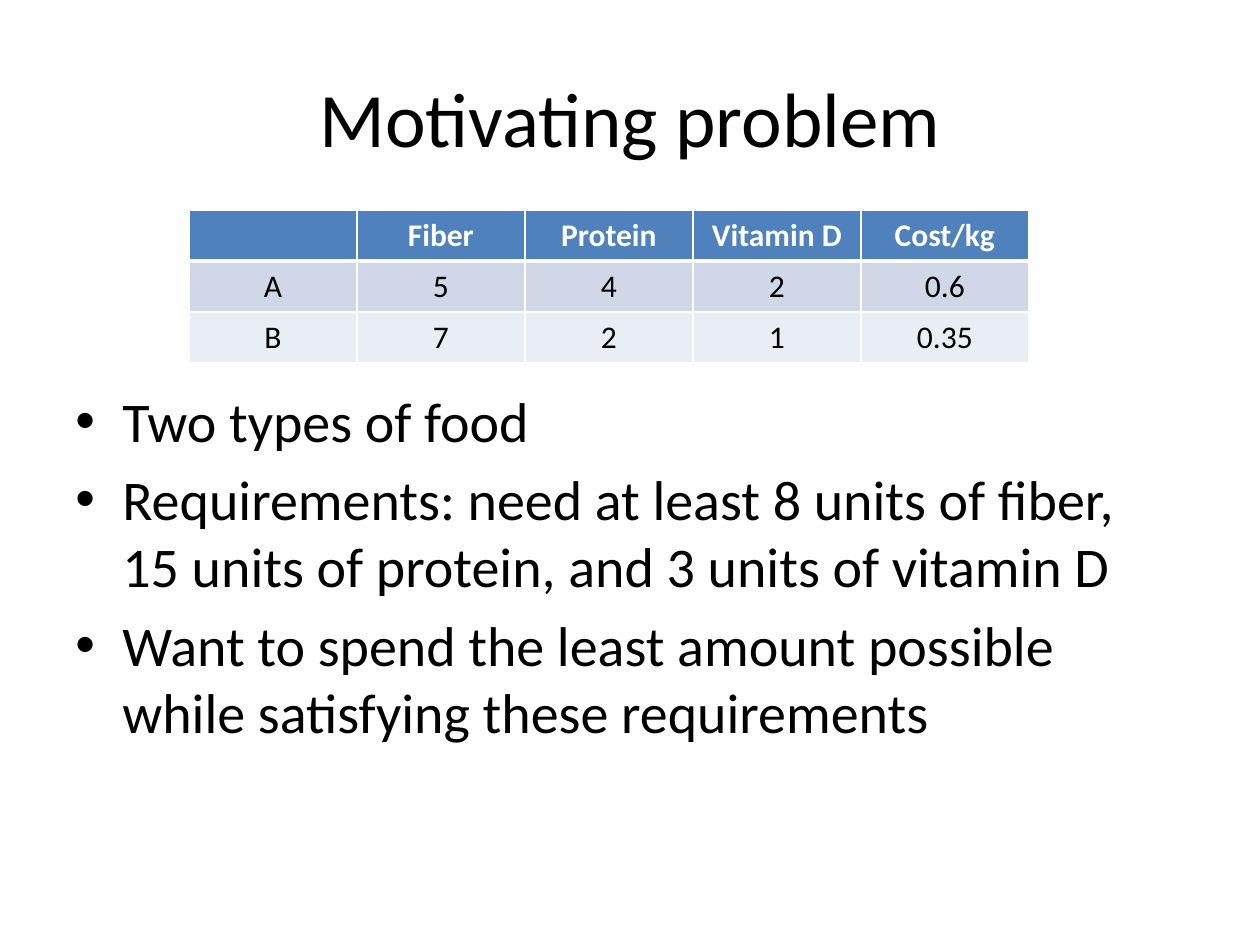
import dataclasses

import pptx
import pptx.dml.color
import pptx.enum.text
import pptx.oxml
import pptx.oxml.ns
import pptx.util

ALIGN = pptx.enum.text.PP_ALIGN
ANCHOR = pptx.enum.text.MSO_ANCHOR

TITLE = "Motivating problem"
FOODS = [
    ["", "Fiber", "Protein", "Vitamin D", "Cost/kg"],
    ["A", "5", "4", "2", "0.6"],
    ["B", "7", "2", "1", "0.35"],
]
BULLETS = [
    "Two types of food",
    "Requirements: need at least 8 units of fiber, "
    "15 units of protein, and 3 units of vitamin D",
    "Want to spend the least amount possible while satisfying these requirements",
]


@dataclasses.dataclass(frozen=True)
class Theme:
    font: str = "Calibri"
    text: str = "000000"
    header_text: str = "FFFFFF"
    border: str = "FFFFFF"
    header_fill: str = "4F81BD"
    row_fills: tuple = ("D0D8E8", "E9EDF4")
    title_size: int = 44
    body_size: int = 32
    table_size: int = 18
    border_width: int = 1
    header_rule: int = 3


THEME = Theme()


def px(n):
    return pptx.util.Emu(round(n * 914400 / 126))


def rgb(color):
    return pptx.dml.color.RGBColor.from_string(color)


def style(p, size, color=THEME.text, bold=False, align=ALIGN.LEFT):
    p.alignment = align
    p.font.name = THEME.font
    p.font.size = pptx.util.Pt(size)
    p.font.bold = bold
    p.font.color.rgb = rgb(color)


def add_text_box(s, x, y, w, h, anchor):
    tf = s.shapes.add_textbox(px(x), px(y), px(w), px(h)).text_frame
    tf.word_wrap = True
    tf.vertical_anchor = anchor
    return tf


def add_title(s, text):
    p = add_text_box(s, 63, 38, 1134, 157, ANCHOR.MIDDLE).paragraphs[0]
    p.text = text
    style(p, THEME.title_size, align=ALIGN.CENTER)


def add_bullets(s, items):
    tf = add_text_box(s, 63, 380, 1134, 464, ANCHOR.TOP)
    for i, item in enumerate(items):
        p = tf.add_paragraph() if i else tf.paragraphs[0]
        p.text = item
        style(p, THEME.body_size)
        p.space_before = pptx.util.Pt(THEME.body_size * 0.2 if i else 0)
        set_bullet(p)


def set_bullet(p):
    ns = pptx.oxml.ns.nsdecls("a")
    pPr = p._p.get_or_add_pPr()
    pPr.set("marL", str(px(47)))
    pPr.set("indent", str(-px(47)))
    defaults = pPr.find(pptx.oxml.ns.qn("a:defRPr"))
    for tag in ('buFont typeface="Arial"', 'buChar char="•"'):
        defaults.addprevious(pptx.oxml.parse_xml(f"<a:{tag} {ns}/>"))


def set_borders(cell, row):
    ns = pptx.oxml.ns.nsdecls("a")
    widths = dict.fromkeys("LRTB", THEME.border_width)
    if row < 2:
        widths["BT"[row]] = THEME.header_rule
    for side, width in widths.items():
        cell._tc.get_or_add_tcPr().append(pptx.oxml.parse_xml(
            f'<a:ln{side} {ns} w="{pptx.util.Pt(width)}"><a:solidFill>'
            f'<a:srgbClr val="{THEME.border}"/></a:solidFill></a:ln{side}>'))


def fill_cell(cell, text, row):
    header = row == 0
    set_borders(cell, row)
    cell.fill.solid()
    cell.fill.fore_color.rgb = rgb(
        THEME.header_fill if header else THEME.row_fills[(row - 1) % 2])
    p = cell.text_frame.paragraphs[0]
    p.text = text
    style(p, THEME.table_size, THEME.header_text if header else THEME.text,
          header, ALIGN.CENTER)


def add_food_table(s, rows):
    n, m = len(rows), len(rows[0])
    table = s.shapes.add_table(n, m, px(189), px(210), px(168 * m), px(51 * n)).table
    for r, values in enumerate(rows):
        for c, value in enumerate(values):
            fill_cell(table.cell(r, c), value, r)


def main():
    prs = pptx.Presentation()
    prs.slide_width, prs.slide_height = px(1260), px(945)
    s = prs.slides.add_slide(prs.slide_layouts[6])
    add_title(s, TITLE)
    add_bullets(s, BULLETS)
    add_food_table(s, FOODS)
    prs.save("out.pptx")


if __name__ == "__main__":
    main()
